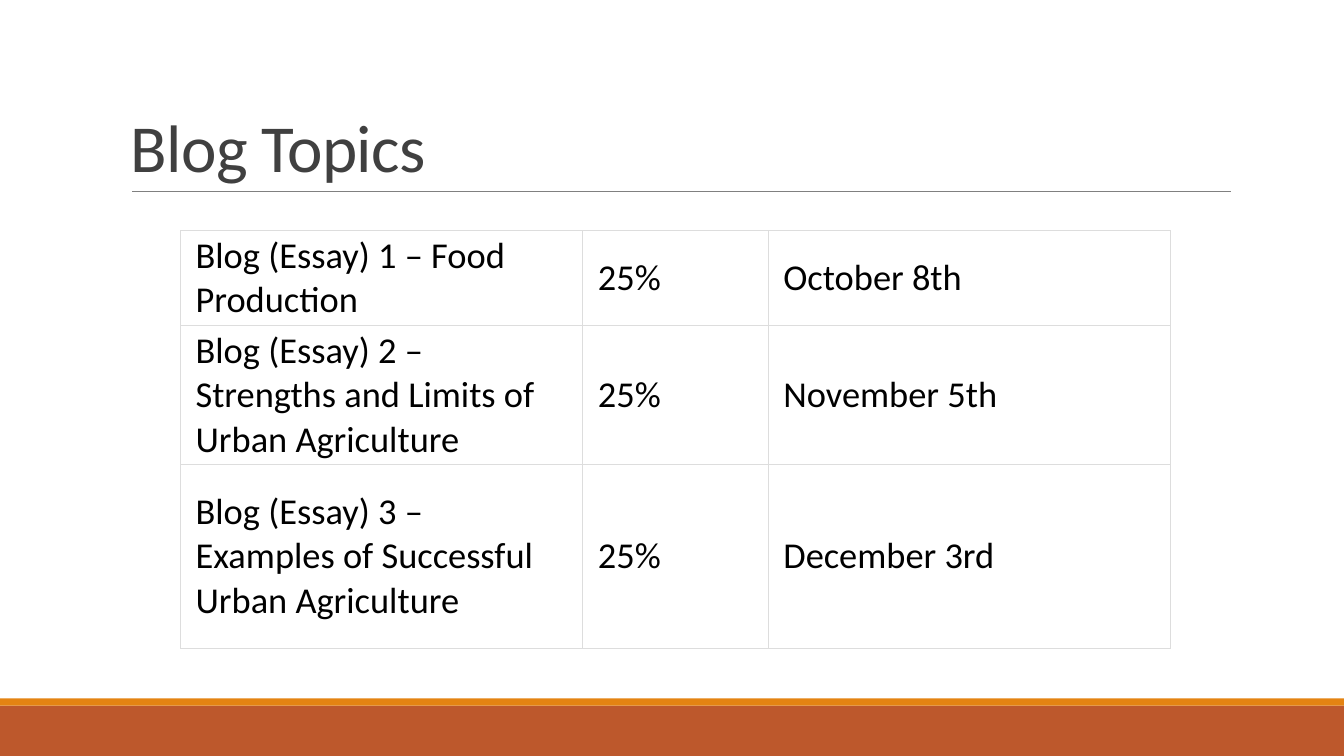
from dataclasses import dataclass

from lxml import etree
from pptx import Presentation
from pptx.dml.color import RGBColor
from pptx.enum.shapes import MSO_CONNECTOR, MSO_SHAPE
from pptx.enum.text import MSO_ANCHOR
from pptx.oxml.ns import qn
from pptx.util import Pt

RECTANGLE = MSO_SHAPE.RECTANGLE
STRAIGHT = MSO_CONNECTOR.STRAIGHT
BOTTOM = MSO_ANCHOR.BOTTOM
MIDDLE = MSO_ANCHOR.MIDDLE
EMU_PER_PX = 9144
BLANK_LAYOUT = 6


@dataclass(frozen=True)
class Theme:
    """Colours, font and type sizes of the slide."""

    font: str = "Calibri"
    title: str = "404040"
    body: str = "000000"
    rule: str = "808080"
    grid: str = "DDDDDD"
    footer: str = "BD582C"
    accent: str = "E48312"
    title_size: int = 48
    body_size: int = 26
    rule_width: float = 0.5
    grid_width: float = 0.75


def px(length):
    """Turn whole px into EMU."""
    return length * EMU_PER_PX


def apply(target, values):
    """Set each attribute of the target from a dict."""
    for name, value in values.items():
        setattr(target, name, value)


class SlideBuilder:
    """Draws themed elements on the current slide."""

    def __init__(self, slide, theme):
        """Keep the slide and its theme."""
        self.slide = slide
        self.theme = theme

    def style_text(self, paragraph, text, size, color):
        """Write one run in the theme font."""
        run = paragraph.add_run()
        run.text = text
        apply(run.font, {"name": self.theme.font, "size": Pt(size)})
        run.font.color.rgb = RGBColor.from_string(color)
        return run

    def band(self, left, top, width, height, color):
        """Add a plain filled rectangle."""
        shape = self.slide.shapes.add_shape(RECTANGLE, *map(px, (left, top, width, height)))
        shape.shadow.inherit = False
        shape.fill.solid()
        shape.fill.fore_color.rgb = RGBColor.from_string(color)
        shape.line.fill.background()

    def rule(self, left, right, top):
        """Add a thin horizontal line."""
        line = self.slide.shapes.add_connector(STRAIGHT, *map(px, (left, top, right, top)))
        line.line.color.rgb = RGBColor.from_string(self.theme.rule)
        line.line.width = Pt(self.theme.rule_width)
        etree.SubElement(line._element.spPr, qn("a:effectLst"))

    def title(self, left, top, width, height, text):
        """Add the bottom-anchored heading."""
        box = self.slide.shapes.add_textbox(*map(px, (left, top, width, height)))
        apply(box.text_frame, {"word_wrap": True, "vertical_anchor": BOTTOM})
        paragraph = box.text_frame.paragraphs[0]
        paragraph.line_spacing = 0.85
        run = self.style_text(paragraph, text, self.theme.title_size, self.theme.title)
        run.font._element.set("spc", "-50")

    def borders(self, cell):
        """Draw the four grid lines of a cell."""
        properties = cell._tc.get_or_add_tcPr()
        for index, side in enumerate(("lnL", "lnR", "lnT", "lnB")):
            line = etree.Element(qn(f"a:{side}"), w=str(Pt(self.theme.grid_width)))
            fill = etree.SubElement(line, qn("a:solidFill"))
            etree.SubElement(fill, qn("a:srgbClr"), val=self.theme.grid)
            properties.insert(index, line)

    def table(self, left, top, column_widths, row_heights, rows):
        """Add a bordered table with unfilled cells."""
        size = (sum(column_widths), sum(row_heights))
        table = self.slide.shapes.add_table(
            len(rows), len(column_widths), *map(px, (left, top, *size))
        ).table
        apply(table, {"first_row": False, "horz_banding": False})
        for column, width in zip(table.columns, column_widths):
            column.width = px(width)
        for row, height, texts in zip(table.rows, row_heights, rows):
            row.height = px(height)
            for cell, text in zip(row.cells, texts):
                apply(cell, {
                    "vertical_anchor": MIDDLE,
                    "margin_left": px(15), "margin_right": px(15),
                    "margin_top": 0, "margin_bottom": 0,
                })
                cell.fill.background()
                self.borders(cell)
                paragraph = cell.text_frame.paragraphs[0]
                self.style_text(paragraph, text, self.theme.body_size, self.theme.body)


def main():
    """Build and save the blog topics slide."""
    presentation = Presentation()
    apply(presentation, {"slide_width": px(1333), "slide_height": px(750)})
    slide = presentation.slides.add_slide(presentation.slide_layouts[BLANK_LAYOUT])
    theme = Theme()
    builder = SlideBuilder(slide, theme)
    builder.band(0, 700, 1333, 50, theme.footer)
    builder.band(0, 693, 1333, 7, theme.accent)
    builder.rule(131, 1221, 190)
    builder.title(120, 31, 1100, 159, "Blog Topics")
    topics = [
        ("Blog (Essay) 1 – Food Production", "25%", "October 8th"),
        ("Blog (Essay) 2 – Strengths and Limits of Urban Agriculture", "25%", "November 5th"),
        ("Blog (Essay) 3 – Examples of Successful Urban Agriculture", "25%", "December 3rd"),
    ]
    builder.table(179, 229, (399, 184, 399), (94, 138, 182), topics)
    presentation.save("out.pptx")


if __name__ == "__main__":
    main()
